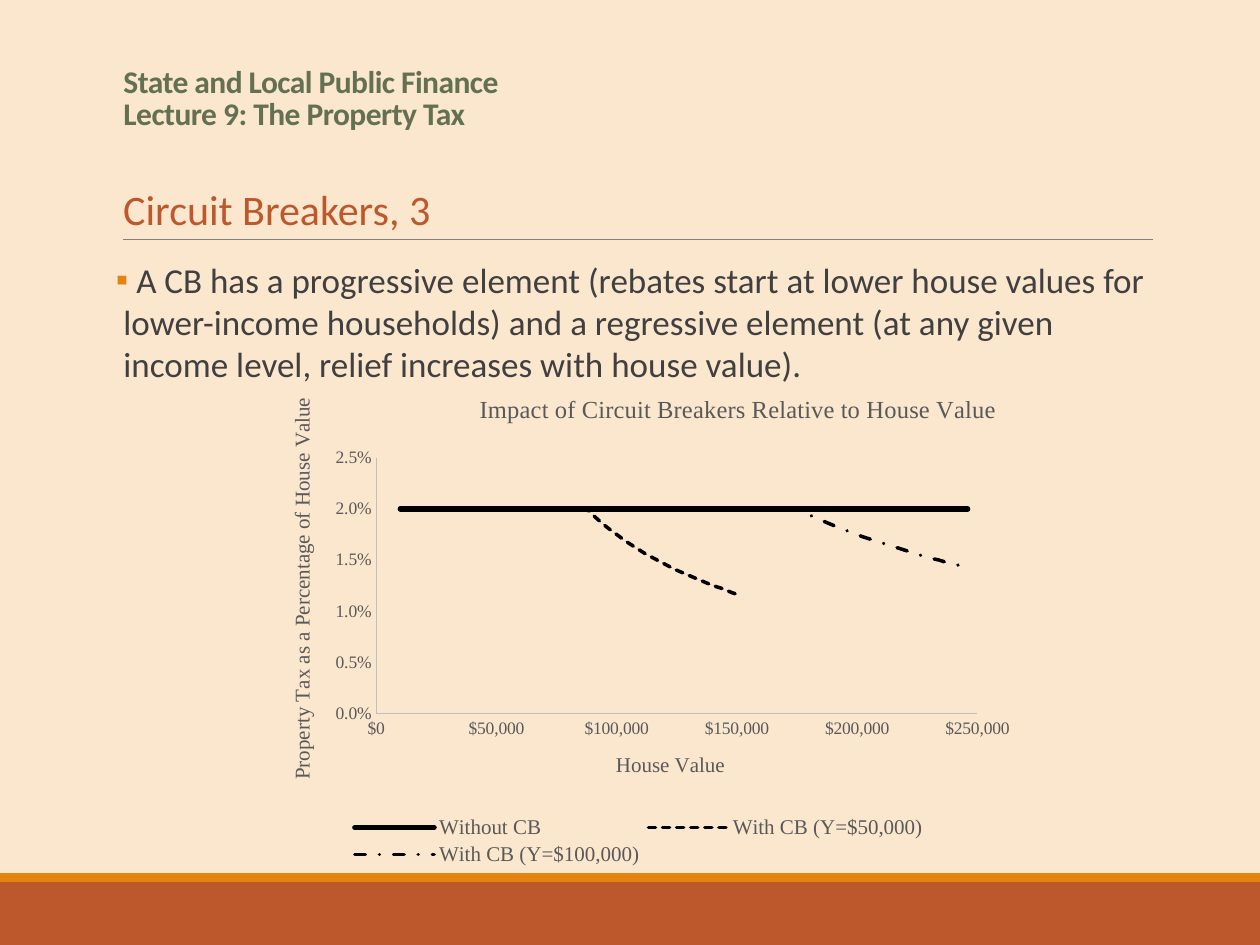
from dataclasses import dataclass

from lxml.etree import SubElement
from pptx import Presentation
from pptx.chart.data import XyChartData
from pptx.dml.color import RGBColor
from pptx.enum.chart import XL_CHART_TYPE, XL_LEGEND_POSITION, XL_TICK_MARK
from pptx.enum.dml import MSO_LINE
from pptx.enum.shapes import MSO_CONNECTOR, MSO_SHAPE
from pptx.enum.text import MSO_ANCHOR, MSO_AUTO_SIZE, PP_ALIGN
from pptx.oxml import parse_xml
from pptx.oxml.ns import nsdecls, qn
from pptx.util import Inches, Pt

COLS, ROWS = 100, 75
WIDTH, HEIGHT = Inches(10), Inches(7.5)


@dataclass(frozen=True)
class Theme:
    back: str = "FBE6CE"
    rust: str = "BD582C"
    orange: str = "E48312"
    green: str = "637052"
    text: str = "404040"
    rule: str = "808080"
    label: str = "595959"
    axis: str = "BFBFBF"
    curve: str = "000000"
    font: str = "Calibri"
    chart_font: str = "Times New Roman"
    title: float = 18
    heading: float = 24
    body: float = 20
    chart_title: float = 14
    axis_title: float = 12
    tick: float = 10


T = Theme()


def rgb(color):
    return RGBColor.from_string(color)


def grid(col, row, cols, rows):
    return (int(WIDTH * col / COLS), int(HEIGHT * row / ROWS),
            int(WIDTH * cols / COLS), int(HEIGHT * rows / ROWS))


def place(sp, box):
    sp.left, sp.top, sp.width, sp.height = box


def style(font, size, color, name, bold=False):
    font.size, font.name, font.bold = Pt(size), name, bold
    font.color.rgb = rgb(color)


def add_run(p, text, size, color, bold=False, name=T.font):
    r = p.add_run()
    r.text = text
    style(r.font, size, color, name, bold)
    return r


def add_bar(s, box, color):
    sp = s.shapes.add_shape(MSO_SHAPE.RECTANGLE, *box)
    sp.shadow.inherit = False
    sp.fill.solid()
    sp.fill.fore_color.rgb = rgb(color)
    sp.line.fill.background()


def add_rule(s, col, row, cols):
    x, y, w, _ = grid(col, row, cols, 0)
    line = s.shapes.add_connector(MSO_CONNECTOR.STRAIGHT, x, y, x + w, y)
    line.line.color.rgb = rgb(T.rule)
    line.line.width = Pt(0.5)
    SubElement(line._element.spPr, qn("a:effectLst"))


def fill_title(sp, box, lines):
    place(sp, box)
    tf = sp.text_frame
    tf.auto_size = MSO_AUTO_SIZE.NONE
    tf.vertical_anchor = MSO_ANCHOR.BOTTOM
    p = tf.paragraphs[0]
    p.alignment, p.line_spacing = PP_ALIGN.LEFT, 0.85
    for i, text in enumerate(lines):
        if i:
            p.add_line_break()
        r = add_run(p, text, T.title, T.green, bold=True)
        r._r.get_or_add_rPr().set("spc", "-30")


def add_heading(s, box, text):
    tf = s.shapes.add_textbox(*box).text_frame
    tf.word_wrap = False
    add_run(tf.paragraphs[0], text, T.heading, T.rust)


def fill_body(sp, box, text):
    place(sp, box)
    tf = sp.text_frame
    tf.auto_size = MSO_AUTO_SIZE.NONE
    tf.margin_left = tf.margin_right = 0
    p = tf.paragraphs[0]
    p.space_before, p.space_after = Pt(6.8), Pt(1.1)
    pPr = p._p.get_or_add_pPr()
    pPr.set("marL", str(Inches(0.06)))
    pPr.set("indent", str(-Inches(0.06)))
    color = SubElement(pPr, qn("a:buClr"))
    SubElement(color, qn("a:srgbClr")).set("val", T.orange)
    SubElement(pPr, qn("a:buChar")).set("char", "▪")
    add_run(p, " ", T.body, T.text, bold=True)
    add_run(p, text, T.body, T.text)


def set_layout(el, index, x, y, w=None, h=None, inner=False):
    for old in el.findall(qn("c:layout")):
        el.remove(old)
    layout = parse_xml(f"<c:layout {nsdecls('c')}><c:manualLayout/></c:layout>")
    values = [("layoutTarget", "inner")] if inner else []
    values += [("xMode", "edge"), ("yMode", "edge"), ("x", x), ("y", y)]
    values += [(k, v) for k, v in (("w", w), ("h", h)) if v]
    for tag, value in values:
        SubElement(layout[0], qn(f"c:{tag}")).set("val", str(value))
    el.insert(index, layout)


def write_chart_title(title, text, size, x, y):
    tf = title.text_frame
    add_run(tf.paragraphs[0], text, size, T.label, name=T.chart_font)
    set_layout(title._element, 1, x, y)
    return tf


def format_axis(axis, top, step, number_format, title, x, y):
    axis.minimum_scale, axis.maximum_scale, axis.major_unit = 0, top, step
    axis.has_major_gridlines = False
    axis.major_tick_mark = axis.minor_tick_mark = XL_TICK_MARK.NONE
    axis.tick_labels.number_format = number_format
    axis.tick_labels.number_format_is_linked = False
    style(axis.tick_labels.font, T.tick, T.label, T.chart_font)
    axis.format.line.color.rgb = rgb(T.axis)
    axis.format.line.width = Pt(0.75)
    return write_chart_title(axis.axis_title, title, T.axis_title, x, y)


def circuit_breaker_data():
    low = list(range(80000, 152001, 4000))
    high = [*range(123000, 155001, 4000), *range(158000, 246001, 4000)]
    houses = [10000, *low, *high]
    split = 1 + len(low)
    rate, share = 0.02, 0.035
    data = XyChartData()
    for name, first, last, income in (("Without CB", 0, len(houses), None),
                                      ("With CB (Y=$50,000)", 1, split, 50000),
                                      ("With CB (Y=$100,000)", split, len(houses), 100000)):
        series = data.add_series(name)
        for i, value in enumerate(houses):
            tax = min(rate, share * income / value) if income else rate
            series.add_data_point(value, round(tax, 4) if first <= i < last else None)
    return data


def add_tax_chart(s, box):
    chart = s.shapes.add_chart(XL_CHART_TYPE.XY_SCATTER_LINES_NO_MARKERS,
                               *box, circuit_breaker_data()).chart
    style(chart.font, T.tick, T.label, T.chart_font)
    chart.plots[0].vary_by_categories = False
    looks = ((3, MSO_LINE.SOLID), (2, MSO_LINE.SQUARE_DOT), (2, MSO_LINE.DASH_DOT))
    for series, (width, dash) in zip(chart.plots[0].series, looks):
        series.smooth = True
        line = series.format.line
        line.color.rgb = rgb(T.curve)
        line.width, line.dash_style = Pt(width), dash
        series._element.spPr.find(qn("a:ln")).set("cap", "rnd")
    chart.has_title = True
    write_chart_title(chart.chart_title, "Impact of Circuit Breakers Relative to House Value",
                      T.chart_title, 0.28, 0.02)
    format_axis(chart.category_axis, 250000, 50000, '"$"#,##0', "House Value", 0.46, 0.75)
    tf = format_axis(chart.value_axis, 0.025, 0.005, "0.0%",
                     "Property Tax as a Percentage of House Value", 0.03, 0.03)
    tf._txBody.bodyPr.set("rot", "-5400000")
    chart.has_legend = True
    legend = chart.legend
    legend.position = XL_LEGEND_POSITION.BOTTOM
    legend.include_in_layout = False
    style(legend.font, T.axis_title, T.label, T.chart_font)
    set_layout(legend._element, 1, 0.11, 0.88, 0.77, 0.12)
    set_layout(chart._chartSpace.chart.plotArea, 0, 0.15, 0.16, 0.79, 0.52, inner=True)


def main():
    prs = Presentation()
    prs.slide_width, prs.slide_height = WIDTH, HEIGHT
    s = prs.slides.add_slide(prs.slide_layouts[1])
    s.background.fill.solid()
    s.background.fill.fore_color.rgb = rgb(T.back)
    add_bar(s, grid(0, 70, COLS, 5), T.rust)
    add_bar(s, grid(0, 69.3, COLS, 0.7), T.orange)
    add_rule(s, 9.8, 19, 81.7)
    fill_title(s.shapes.title, grid(8.8, 3.3, 82.5, 7.7),
               ("State and Local Public Finance", "Lecture 9: The Property Tax"))
    add_heading(s, grid(8.8, 14.1, 26.6, 5), "Circuit Breakers, 3")
    fill_body(s.placeholders[1], grid(9.2, 20, 81.8, 49.2),
              "A CB has a progressive element (rebates start at lower house values for "
              "lower-income households) and a regressive element (at any given income "
              "level, relief increases with house value).")
    add_tax_chart(s, grid(20.8, 30.1, 60.4, 39))
    prs.save("out.pptx")


if __name__ == "__main__":
    main()
